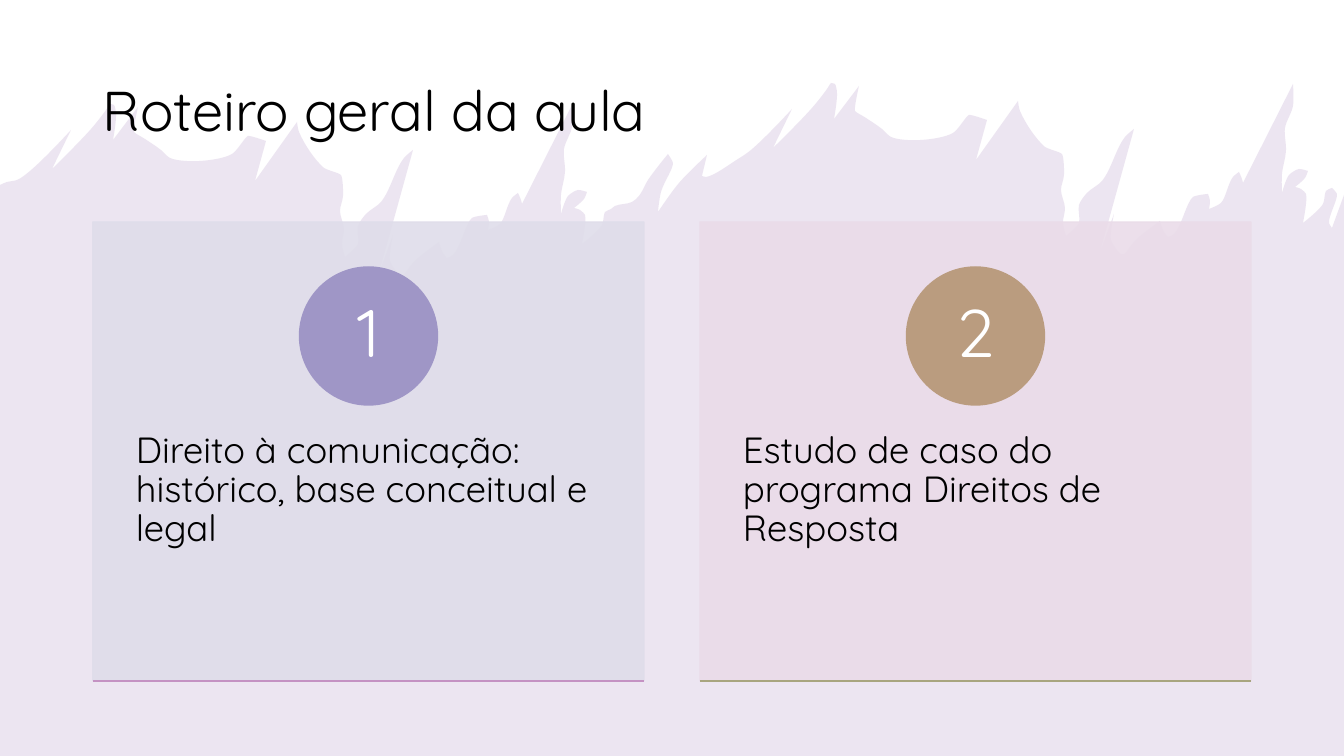
from math import dist
from lxml import etree
from pptx import Presentation
from pptx.dml.color import RGBColor
from pptx.enum.shapes import MSO_CONNECTOR, MSO_SHAPE
from pptx.enum.text import MSO_ANCHOR, PP_ALIGN
from pptx.oxml.ns import qn
from pptx.util import Pt

W, H = 1344, 756
SCALE = 9525 * 96 / 100.8
FONT = "Quicksand"
RECT, OVAL = MSO_SHAPE.RECTANGLE, MSO_SHAPE.OVAL
STRAIGHT = MSO_CONNECTOR.STRAIGHT
TOP, MIDDLE = MSO_ANCHOR.TOP, MSO_ANCHOR.MIDDLE
LEFT, CENTER = PP_ALIGN.LEFT, PP_ALIGN.CENTER

# The brush edge is one run of splashes drawn twice, joined by a bridge.
LEAD = [(0, 185), (7, 182)]
SPLASH = [
    (17, 180), (30, 171), (71, 130), (52, 169), (91, 129), (106, 110),
    (110, 104), (114, 105), (116, 113), (113, 140), (138, 107), (134, 132),
    (145, 139), (161, 150), (170, 158), (200, 161), (232, 154), (248, 136),
    (266, 141), (255, 181), (297, 122), (299, 132), (324, 168), (326, 169),
    (341, 175), (343, 196), (340, 211), (344, 229), (342, 244), (345, 257),
    (358, 244), (358, 226), (366, 214), (381, 202), (404, 158), (413, 150),
    (379, 273), (393, 235), (390, 261), (400, 275), (403, 275), (412, 264),
    (418, 258), (439, 242), (443, 253), (447, 258), (453, 255), (472, 218),
    (487, 215), (489, 222), (488, 230), (500, 224), (512, 198), (518, 193),
    (521, 200), (522, 204), (572, 105), (572, 127), (564, 149), (565, 172),
    (561, 195), (561, 214), (568, 196), (578, 190), (587, 192), (584, 199),
    (574, 208), (580, 210), (585, 215), (582, 244), (602, 225), (605, 212),
    (611, 209),
]
BRIDGE = [
    (615, 206), (632, 202), (639, 196), (648, 180), (668, 154), (673, 163),
    (661, 192), (658, 212), (679, 183), (707, 155), (702, 176), (706, 177),
]
TAIL = [(1337, 194), (1329, 223), (1332, 228), (1344, 195)]
SHIFT_X, SHIFT_Y = 721, -21


def px(n):
    return round(n * SCALE)


def rgb(color):
    return RGBColor.from_string(color)


def set_solid(fill, color, opacity):
    fill.solid()
    fill.fore_color.rgb = rgb(color)
    if opacity < 100:
        clr = fill._xPr.find(qn("a:solidFill"))[0]
        etree.SubElement(clr, qn("a:alpha"), val=str(opacity * 1000))


def paint(shape, color, opacity=100, line=False):
    shape.shadow.inherit = False
    set_solid(shape.fill, color, opacity)
    if line:
        shape.line.width = Pt(1)
        set_solid(shape.line.fill, color, opacity)
    else:
        shape.line.fill.background()


def write(shape, text, size, color="000000", anchor=TOP, align=LEFT, inset=(10, 5)):
    tf = shape.text_frame
    tf.word_wrap = True
    tf.vertical_anchor = anchor
    tf.margin_left = tf.margin_right = px(inset[0])
    tf.margin_top = tf.margin_bottom = px(inset[1])
    p = tf.paragraphs[0]
    p.alignment = align
    p.line_spacing = 0.9
    r = p.add_run()
    r.text = text
    r.font.name = FONT
    r.font.size = Pt(size)
    r.font.color.rgb = rgb(color)


def tangent(a, b, c):
    """Direction of the curve at b, fading to zero where the edge turns sharply."""
    (ux, uy), (vx, vy) = [
        ((q[0] - p[0]) / dist(p, q), (q[1] - p[1]) / dist(p, q))
        for p, q in ((a, b), (b, c))
    ]
    weight = max(0, ux * vx + uy * vy) / 2
    return (ux + vx) * weight, (uy + vy) * weight


def round_edge(shape, points):
    """Turn the first segments of a freeform, which join points, into curves."""
    inner = [tangent(*trio) for trio in zip(points, points[1:], points[2:])]
    tangents = [(0, 0)] + inner + [(0, 0)]
    segments = list(shape._element.iter(qn("a:lnTo")))
    for seg, a, b, ta, tb in zip(segments, points, points[1:], tangents, tangents[1:]):
        reach = dist(a, b) / 3
        curve = etree.Element(qn("a:cubicBezTo"))
        for (x, y), (tx, ty), step in ((a, ta, reach), (b, tb, -reach), (b, tb, 0)):
            etree.SubElement(curve, qn("a:pt"),
                             x=str(round(x + tx * step - shape.left)),
                             y=str(round(y + ty * step - shape.top)))
        seg.getparent().replace(seg, curve)


def add_brush(s):
    second = [(x + SHIFT_X, y + SHIFT_Y) for x, y in SPLASH]
    edge = [(px(x), px(y)) for x, y in LEAD + SPLASH + BRIDGE + second + TAIL]
    builder = s.shapes.build_freeform(*edge[0], scale=1.0)
    builder.add_line_segments(edge[1:] + [(px(W), px(H)), (0, px(H))], close=True)
    brush = builder.convert_to_shape()
    round_edge(brush, edge)
    paint(brush, "A37FBA", opacity=20)


def add_title(s, text, x, y, w, h):
    box = s.shapes.add_textbox(px(x), px(y), px(w), px(h))
    write(box, text, 40, anchor=MIDDLE)


def add_card(s, x, y, w, h, number, text, fill, badge, rule):
    panel = s.shapes.add_shape(RECT, px(x), px(y), px(w), px(h))
    paint(panel, fill, opacity=90, line=True)

    box = s.shapes.add_textbox(px(x), px(y + 174), px(w), px(h - 184))
    write(box, text, 26, inset=(43, 36))

    d = 138
    circle = s.shapes.add_shape(OVAL, px(x + (w - d) / 2), px(y + 45), px(d), px(d))
    paint(circle, badge, line=True)
    write(circle, number, 48, "FFFFFF", MIDDLE, CENTER, (11, 1))

    base = s.shapes.add_connector(STRAIGHT, px(x), px(y + h), px(x + w), px(y + h))
    base.line.color.rgb = rgb(rule)
    base.line.width = Pt(1)
    etree.SubElement(base._element.spPr, qn("a:effectLst"))


def main():
    prs = Presentation()
    prs.slide_width, prs.slide_height = px(W), px(H)
    s = prs.slides.add_slide(prs.slide_layouts[6])
    set_solid(s.background.fill, "FFFFFF", 100)
    add_brush(s)
    add_title(s, "Roteiro geral da aula", 93, 40, 1159, 146)
    cards = [
        ("1", "Direito à comunicação: histórico, base conceitual e legal",
         "DFDDEA", "9F96C6", "C492C3"),
        ("2", "Estudo de caso do programa Direitos de Resposta",
         "EADCE9", "BA9C7F", "A8A57F"),
    ]
    for i, card in enumerate(cards):
        add_card(s, 93 + i * 607, 222, 551, 459, *card)
    prs.save("out.pptx")


if __name__ == "__main__":
    main()
